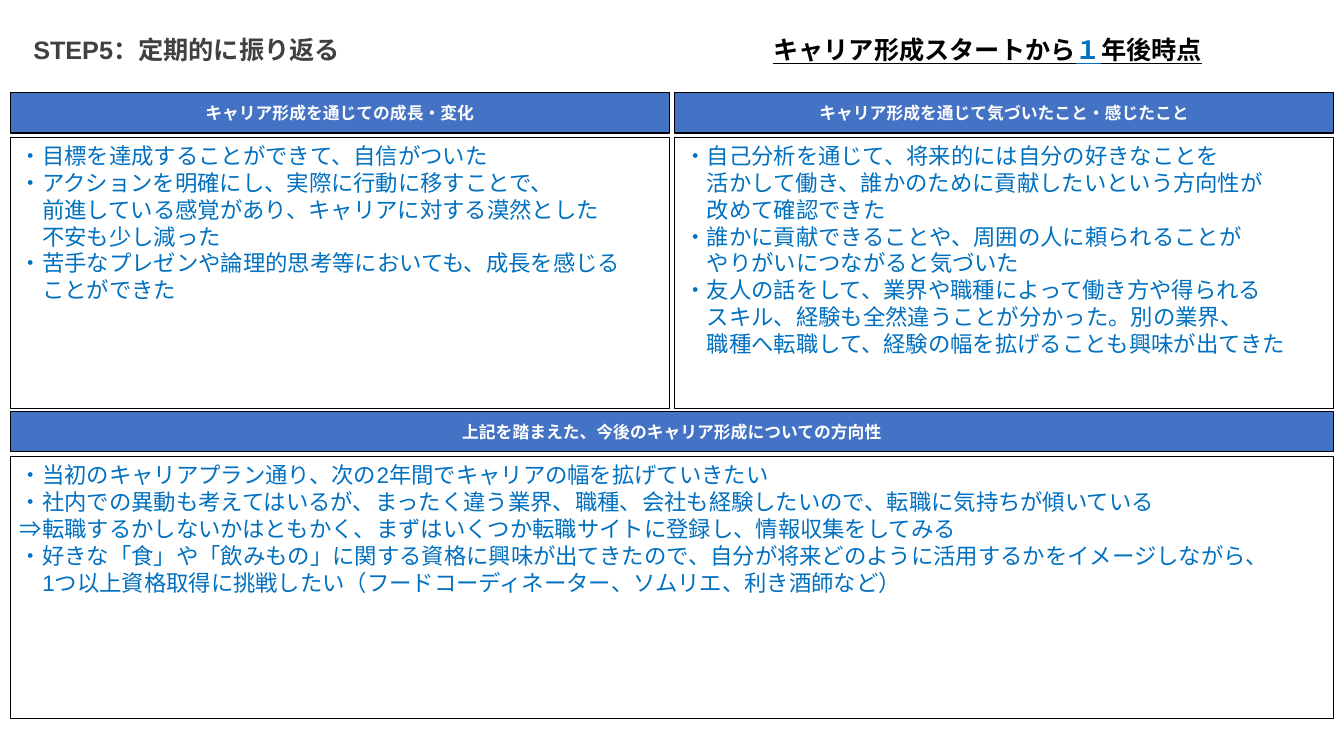
"""Build a one-slide career review sheet with two headed panels above a wide one."""
from dataclasses import dataclass

from pptx import Presentation
from pptx.dml.color import RGBColor as Rgb
from pptx.enum.shapes import MSO_SHAPE as Kind
from pptx.enum.text import MSO_ANCHOR as Anchor, MSO_AUTO_SIZE as Fit, PP_ALIGN as Align
from pptx.util import Inches, Pt


@dataclass(frozen=True)
class Theme:
    blue: Rgb = Rgb(0x44, 0x72, 0xC4)
    ink: Rgb = Rgb(0x00, 0x70, 0xC0)
    gray: Rgb = Rgb(0x40, 0x40, 0x40)
    black: Rgb = Rgb(0, 0, 0)
    white: Rgb = Rgb(255, 255, 255)
    face: str = "Arial"
    kanji: str = "Noto Sans CJK JP"
    title: int = 18
    body: int = 16
    head: int = 12


class Sheet:
    """Holds the style and slide, and places parts by column and row."""
    left, wide, gap = 0.1, 6.54, 0.05
    rows = ((0.29, 0.4), (0.92, 0.4), (1.36, 2.69), (4.08, 0.4), (4.53, 2.6))

    def __init__(self, slide, theme):
        self.slide, self.theme = slide, theme

    def cell(self, col, row, span):
        pitch = self.wide + self.gap
        top, high = self.rows[row]
        return [Inches(n) for n in (self.left + col * pitch, top, span * pitch - self.gap, high)]

    def style(self, para, size, color, bold=False, face=None):
        font = para.font
        font.name, font.size, font.bold = face or self.theme.face, Pt(size), bold
        font.color.rgb = color

    def box(self, col, row, span, fill):
        shape = self.slide.shapes.add_shape(Kind.RECTANGLE, *self.cell(col, row, span))
        shape.shadow.inherit = False
        shape.fill.solid()
        shape.fill.fore_color.rgb = fill
        shape.line.color.rgb = self.theme.black
        shape.line.width = Pt(0.75)
        return shape.text_frame

    def head(self, col, row, span, text):
        frame = self.box(col, row, span, self.theme.blue)
        frame.word_wrap = False
        frame.vertical_anchor = Anchor.MIDDLE
        para = frame.paragraphs[0]
        para.text, para.alignment = text, Align.CENTER
        self.style(para, self.theme.head, self.theme.white, True)

    def body(self, col, row, span, lines):
        frame = self.box(col, row, span, self.theme.white)
        frame.word_wrap = True
        frame.vertical_anchor = Anchor.TOP
        frame.text = "\n".join(lines)
        for para in frame.paragraphs:
            para.alignment = Align.LEFT
            self.style(para, self.theme.body, self.theme.ink)
            if not para.text.startswith(("・", "⇒")):
                para._p.get_or_add_pPr().set("marL", str(Pt(self.theme.body)))

    def panel(self, col, row, span, text, lines):
        self.head(col, row, span, text)
        self.body(col, row + 1, span, lines)

    def title(self, col, span, parts, color, face=None, align=Align.LEFT, under=None):
        frame = self.slide.shapes.add_textbox(*self.cell(col, 0, span)).text_frame
        frame.word_wrap = True
        frame.auto_size = Fit.SHAPE_TO_FIT_TEXT
        para = frame.paragraphs[0]
        para.alignment = align
        self.style(para, self.theme.title, color, True, face)
        para.font.underline = under
        for text, tint in parts:
            run = para.add_run()
            run.text = text
            if tint:
                run.font.color.rgb = tint


GROWTH = (
    "・目標を達成することができて、自信がついた",
    "・アクションを明確にし、実際に行動に移すことで、",
    "前進している感覚があり、キャリアに対する漠然とした",
    "不安も少し減った",
    "・苦手なプレゼンや論理的思考等においても、成長を感じる",
    "ことができた",
)
INSIGHT = (
    "・自己分析を通じて、将来的には自分の好きなことを",
    "活かして働き、誰かのために貢献したいという方向性が",
    "改めて確認できた",
    "・誰かに貢献できることや、周囲の人に頼られることが",
    "やりがいにつながると気づいた",
    "・友人の話をして、業界や職種によって働き方や得られる",
    "スキル、経験も全然違うことが分かった。別の業界、",
    "職種へ転職して、経験の幅を拡げることも興味が出てきた",
)
FUTURE = (
    "・当初のキャリアプラン通り、次の2年間でキャリアの幅を拡げていきたい",
    "・社内での異動も考えてはいるが、まったく違う業界、職種、会社も経験したいので、転職に気持ちが傾いている",
    "⇒転職するかしないかはともかく、まずはいくつか転職サイトに登録し、情報収集をしてみる",
    "・好きな「食」や「飲みもの」に関する資格に興味が出てきたので、自分が将来どのように活用するかをイメージしながら、",
    "1つ以上資格取得に挑戦したい（フードコーディネーター、ソムリエ、利き酒師など）",
)


def main():
    deck = Presentation()
    deck.slide_width, deck.slide_height = Inches(13.33), Inches(7.5)
    theme = Theme()
    sheet = Sheet(deck.slides.add_slide(deck.slide_layouts[6]), theme)
    sheet.panel(0, 1, 1, "キャリア形成を通じての成長・変化", GROWTH)
    sheet.panel(1, 1, 1, "キャリア形成を通じて気づいたこと・感じたこと", INSIGHT)
    sheet.panel(0, 3, 2, "上記を踏まえた、今後のキャリア形成についての方向性", FUTURE)
    sheet.title(0.02, 1.35, [("STEP5：定期的に振り返る", None)], theme.gray)
    stage = [("キャリア形成スタートから", None), ("１", theme.ink), ("年後時点", None)]
    sheet.title(1.07, 0.81, stage, theme.black, theme.kanji, Align.CENTER, True)
    deck.save("out.pptx")


if __name__ == "__main__":
    main()
